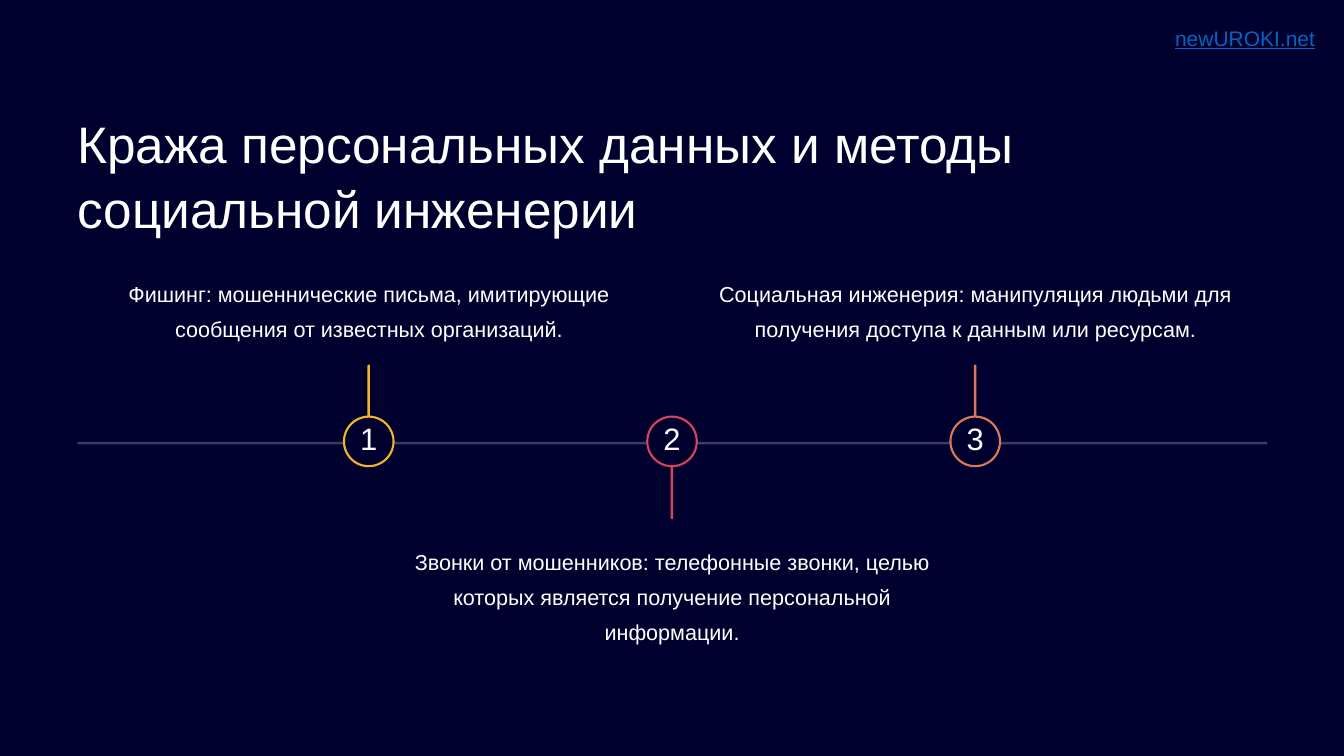
import dataclasses

import lxml.etree
import pptx
import pptx.dml.color
import pptx.enum.shapes
import pptx.enum.text
import pptx.oxml.ns
import pptx.util

Inches = pptx.util.Inches
Pt = pptx.util.Pt
ALIGN = pptx.enum.text.PP_ALIGN


@dataclasses.dataclass(frozen=True)
class Theme:
    font: str = "Arial"
    background: str = "00002E"
    text: str = "FFFFFF"
    link: str = "0563C1"
    yellow: str = "F2B42D"
    red: str = "D7425E"
    orange: str = "DD785E"
    title_size: float = 44
    number_size: float = 26.5
    body_size: float = 18.5
    link_size: float = 18


class TimelineSlide:
    def __init__(self, deck, theme):
        self.theme = theme
        self.slide = deck.slides.add_slide(deck.slide_layouts[5])
        self.paint(self.slide.background.fill, theme.background)

    def paint(self, fill, color):
        fill.solid()
        fill.fore_color.rgb = pptx.dml.color.RGBColor.from_string(color)

    def set_text(self, shape, text, size, spacing=None, align=ALIGN.LEFT,
                 wrap=True, color=None, inset=0):
        frame = shape.text_frame
        frame.text = text
        frame.word_wrap = wrap
        frame.auto_size = pptx.enum.text.MSO_AUTO_SIZE.NONE
        frame.vertical_anchor = pptx.enum.text.MSO_ANCHOR.TOP
        frame.margin_left = frame.margin_right = Inches(inset)
        frame.margin_top = frame.margin_bottom = Inches(inset / 2)
        paragraph = frame.paragraphs[0]
        paragraph.alignment = align
        if spacing:
            paragraph.line_spacing = Pt(spacing)
        font = paragraph.runs[0].font
        font.name = self.theme.font
        font.size = Pt(size)
        self.paint(font.fill, color or self.theme.text)
        return font

    def title(self, text, left, top, width, height):
        title = self.slide.shapes.title
        title.left, title.top = Inches(left), Inches(top)
        title.width, title.height = Inches(width), Inches(height)
        self.set_text(title, text, self.theme.title_size, spacing=55)

    def text(self, text, left, top, width, height, size, **style):
        box = self.slide.shapes.add_textbox(
            Inches(left), Inches(top), Inches(width), Inches(height))
        return self.set_text(box, text, size, **style)

    def rounded(self, left, top, width, height, fill, outline=None, alpha=None):
        shape = self.slide.shapes.add_shape(
            pptx.enum.shapes.MSO_SHAPE.ROUNDED_RECTANGLE,
            Inches(left), Inches(top), Inches(width), Inches(height))
        shape.adjustments[0] = 0.5
        shape.shadow.inherit = False
        self.paint(shape.fill, fill)
        if outline:
            self.paint(shape.line.fill, outline)
            shape.line.width = Pt(1.8)
        else:
            shape.line.fill.background()
        if alpha:
            qn = pptx.oxml.ns.qn
            solid = shape.element.spPr.find(qn("a:solidFill"))
            lxml.etree.SubElement(solid.find(qn("a:srgbClr")), qn("a:alpha"),
                                  val=str(alpha * 1000))

    def milestone(self, number, center, color, text, text_top, text_height, above):
        stem, ring, number_width, text_width = 0.92, 0.59, 0.22, 6.43
        stem_top = AXIS_TOP - stem if above else AXIS_TOP
        self.rounded(center - BAR / 2, stem_top, BAR, stem, color)
        self.rounded(center - ring / 2, 4.96, ring, ring,
                     self.theme.background, outline=color)
        self.text(str(number), center - number_width / 2, 5.07, number_width, 0.37,
                  self.theme.number_size, spacing=26.5, align=ALIGN.CENTER, wrap=False)
        self.text(text, center - text_width / 2, text_top, text_width, text_height,
                  self.theme.body_size, spacing=30, align=ALIGN.CENTER)


AXIS_TOP, BAR = 5.26, 0.03
LEFT, WIDTH = 0.92, 14.17
MIDDLE, STEP = 8, 3.61


def main():
    deck = pptx.Presentation()
    deck.slide_width, deck.slide_height = Inches(16), Inches(9)
    theme = Theme()
    page = TimelineSlide(deck, theme)

    # Heading
    page.title("Кража персональных данных и методы социальной инженерии",
               LEFT, 1.31, WIDTH, 1.54)

    # Timeline axis
    page.rounded(LEFT, AXIS_TOP, WIDTH, BAR, theme.text, alpha=24)

    # Milestones, alternating above and below the axis
    threats = [
        (theme.yellow, "Фишинг: мошеннические письма, имитирующие сообщения "
                       "от известных организаций."),
        (theme.red, "Звонки от мошенников: телефонные звонки, целью которых "
                    "является получение персональной информации."),
        (theme.orange, "Социальная инженерия: манипуляция людьми для получения "
                       "доступа к данным или ресурсам."),
    ]
    for index, (color, threat) in enumerate(threats):
        above = index % 2 == 0
        text_top, text_height = (3.24, 0.84) if above else (6.43, 1.26)
        page.milestone(index + 1, MIDDLE + (index - 1) * STEP, color, threat,
                       text_top, text_height, above)

    # Site address
    address = page.text("newUROKI.net", 13.89, 0.25, 1.88, 0.4, theme.link_size,
                        wrap=False, color=theme.link, inset=0.1)
    address.underline = True

    deck.save("out.pptx")


if __name__ == "__main__":
    main()
